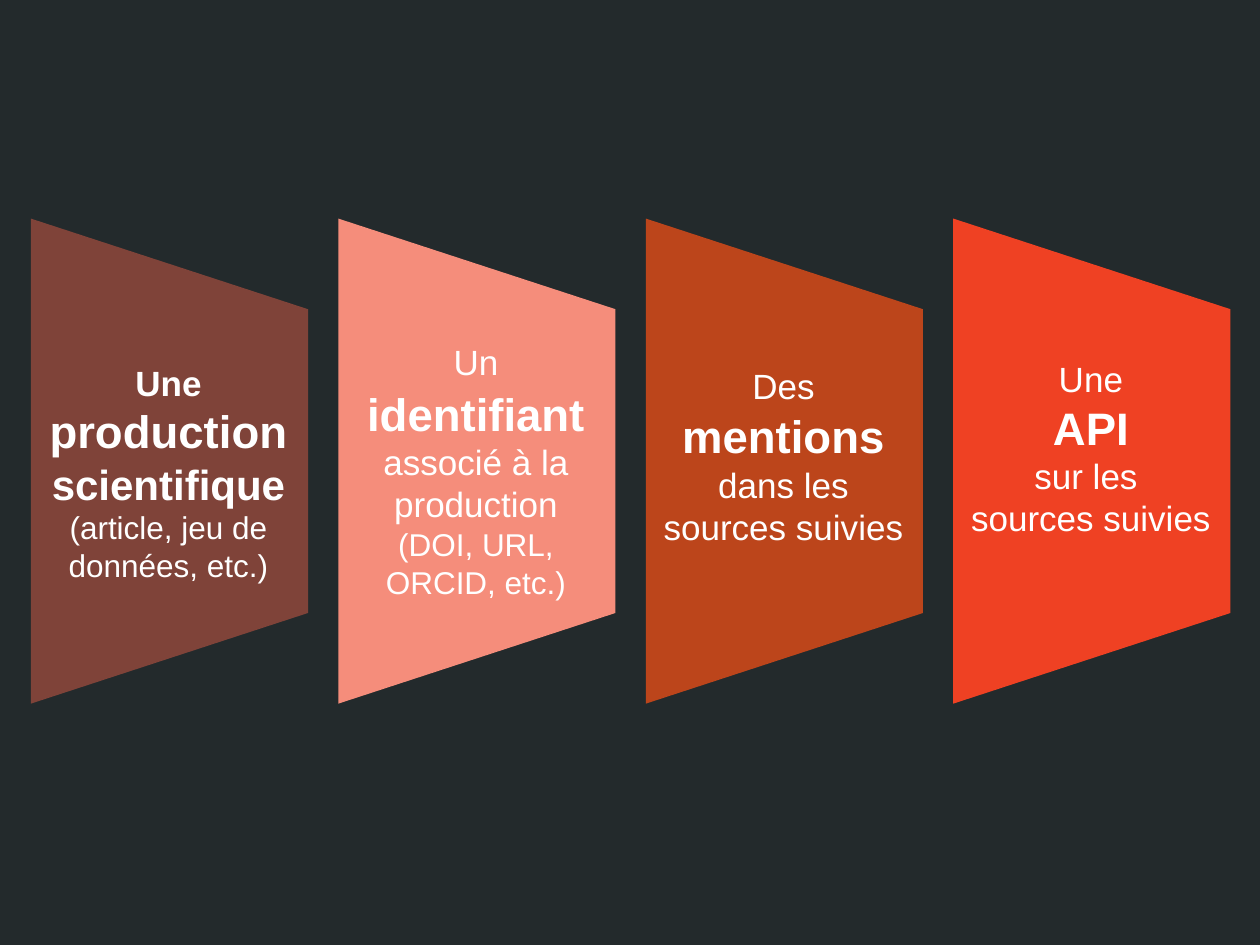
from pptx import Presentation
from pptx import util as u
from pptx.dml import color
from pptx.enum import shapes, text

COLORS = {
    "background": "232A2C",
    "production": "7F4339",
    "identifier": "F58D7B",
    "mentions": "BC451B",
    "api": "EF4123",
    "text": "FFFFFF",
}
FIRST_CENTER, PITCH, MIDDLE = 96.8, 175.7, 263.5
PANEL_LENGTH, PANEL_DEPTH = 277.2, 158.4
TEXT_WIDTH = 151.2

CARDS = [
    ("production", 203, 135.4, [
        [("Une ", 20, True), ("production", 26, True)],
        [("scientifique", 24, True)],
        [("(article, jeu de données, etc.)", 18, False)],
    ]),
    ("identifier", 190.8, 157.7, [
        [("Un ", 20, False), ("identifiant", 26, True), (" ", 28, True),
         ("associé à la production", 20, False)],
        [("(DOI, URL, ORCID, etc.)", 18, False)],
    ]),
    ("mentions", 198.7, 143.3, [
        [("Des", 20, False), (" mentions", 26, True), (" ", 20, True),
         ("dans les sources suivies", 20, False)],
    ]),
    ("api", 200.9, 135.4, [
        [("Une", 20, False)],
        [("API", 26, True)],
        [("sur les \vsources suivies", 20, False)],
    ]),
]


def rgb(name):
    return color.RGBColor.from_string(COLORS[name])


def add_panel(s, center, fill):
    sp = s.shapes.add_shape(
        shapes.MSO_SHAPE.TRAPEZOID,
        u.Pt(center - PANEL_LENGTH / 2), u.Pt(MIDDLE - PANEL_DEPTH / 2),
        u.Pt(PANEL_LENGTH), u.Pt(PANEL_DEPTH))
    sp.rotation = 90
    sp.adjustments[0] = 0.327
    sp.shadow.inherit = False
    sp.fill.solid()
    sp.fill.fore_color.rgb = rgb(fill)
    sp.line.fill.background()


def add_paragraph(p, runs):
    p.alignment = text.PP_ALIGN.CENTER
    p.font.name = "Arial"
    p.font.color.rgb = rgb("text")
    for words, size, bold in runs:
        if "\v" in words:
            first, words = words.split("\v")
            add_run(p, first, size, bold)
            p.add_line_break()
        add_run(p, words, size, bold)


def add_run(p, words, size, bold):
    r = p.add_run()
    r.text = words
    r.font.size = u.Pt(size)
    r.font.bold = bold


def add_label(s, center, top, height, paragraphs):
    sp = s.shapes.add_textbox(
        u.Pt(center - TEXT_WIDTH / 2), u.Pt(top), u.Pt(TEXT_WIDTH), u.Pt(height))
    tf = sp.text_frame
    tf.word_wrap = True
    tf.auto_size = text.MSO_AUTO_SIZE.SHAPE_TO_FIT_TEXT
    for i, runs in enumerate(paragraphs):
        add_paragraph(tf.add_paragraph() if i else tf.paragraphs[0], runs)


def main():
    prs = Presentation()
    prs.slide_width, prs.slide_height = u.Pt(720), u.Pt(540)
    s = prs.slides.add_slide(prs.slide_layouts[6])
    s.background.fill.solid()
    s.background.fill.fore_color.rgb = rgb("background")
    for i, (fill, top, height, paragraphs) in enumerate(CARDS):
        center = FIRST_CENTER + i * PITCH
        add_panel(s, center, fill)
        add_label(s, center - 0.5, top, height, paragraphs)
    prs.save("out.pptx")


if __name__ == "__main__":
    main()
